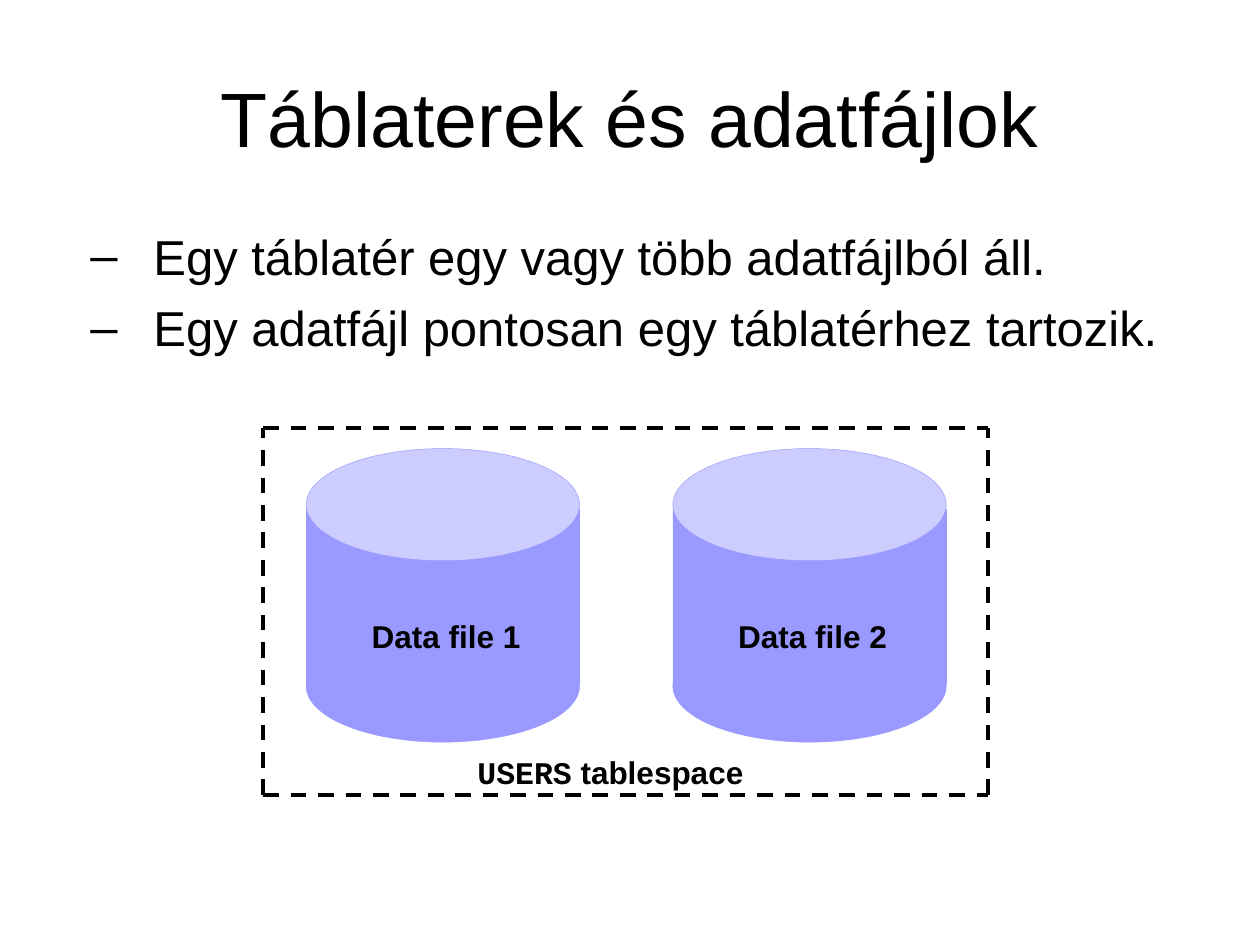
"""Build a slide on tablespaces and the data files they hold."""
from dataclasses import dataclass

from lxml.etree import SubElement
from pptx import Presentation
from pptx.dml.color import RGBColor
from pptx.enum.dml import MSO_LINE
from pptx.enum.shapes import MSO_CONNECTOR, MSO_SHAPE as SHAPE
from pptx.enum.text import MSO_ANCHOR as ANCHOR, PP_ALIGN as ALIGN
from pptx.oxml.ns import qn
from pptx.util import Inches, Pt


@dataclass(frozen=True)
class Theme:
    ink: RGBColor = RGBColor(0x00, 0x00, 0x00)
    side: RGBColor = RGBColor(0x99, 0x99, 0xFF)
    lid: RGBColor = RGBColor(0xCC, 0xCC, 0xFF)
    title: Pt = Pt(44)
    body: Pt = Pt(28)
    label: Pt = Pt(18)
    sans: str = "Arial"
    mono: str = "Courier New"


theme = Theme()


def add_box(left, top, width, height, pad_x=0.1, pad_y=0.05):
    tf = s.shapes.add_textbox(Inches(left), Inches(top), Inches(width), Inches(height)).text_frame
    tf.word_wrap = True
    tf.margin_left = tf.margin_right = Inches(pad_x)
    tf.margin_top = tf.margin_bottom = Inches(pad_y)
    return tf


def add_run(p, text, size=theme.label, font=theme.sans, bold=True, align=ALIGN.CENTER, spacing=0.85):
    p.alignment = align
    p.line_spacing = spacing
    r = p.add_run()
    r.text = text
    r.font.size = size
    r.font.name = font
    r.font.bold = bold
    r.font.color.rgb = theme.ink


prs = Presentation()
prs.slide_width, prs.slide_height = Inches(10), Inches(7.5)
s = prs.slides.add_slide(prs.slide_layouts[6])

tf = add_box(0.5, 0.3, 9, 1.25)
tf.vertical_anchor = ANCHOR.MIDDLE
add_run(tf.paragraphs[0], "Táblaterek és adatfájlok", size=theme.title, bold=False, spacing=1.0)

tf = add_box(0.5, 1.75, 9, 2.03)
statements = ["Egy táblatér egy vagy több adatfájlból áll.", "Egy adatfájl pontosan egy táblatérhez tartozik."]
for i, statement in enumerate(statements):
    p = tf.add_paragraph() if i else tf.paragraphs[0]
    add_run(p, statement, size=theme.body, bold=False, align=ALIGN.LEFT, spacing=1.0)
    p.space_before = Pt(7)
    pPr = p._p.get_or_add_pPr()
    pPr.set("marL", str(Inches(0.62)))
    pPr.set("indent", str(Inches(-0.5)))
    SubElement(pPr, qn("a:buFont"), typeface=theme.sans)
    SubElement(pPr, qn("a:buChar"), char="–")

cylinder_parts = [
    (SHAPE.RECTANGLE, 4.04, 1.39, theme.side),
    (SHAPE.OVAL, 3.56, 0.89, theme.lid),
    (SHAPE.OVAL, 5, 0.89, theme.side),
]
for label, left in [("Data file 1", 2.43), ("Data file 2", 5.34)]:
    for kind, top, height, color in cylinder_parts:
        sp = s.shapes.add_shape(kind, Inches(left), Inches(top), Inches(2.17), Inches(height))
        sp.shadow.inherit = False
        sp.fill.solid()
        sp.fill.fore_color.rgb = color
        sp.line.color.rgb = theme.side
        sp.line.width = Pt(0.25)
    tf = add_box(left + 0.31, 4.91, 1.6, 0.32, pad_x=0.06, pad_y=0.03)
    add_run(tf.paragraphs[0], label)

x1, y1, x2, y2 = 2.09, 3.4, 7.84, 6.31
for ends in [(x1, y2, x2, y2), (x1, y1, x2, y1), (x1, y2, x1, y1), (x2, y2, x2, y1)]:
    edge = s.shapes.add_connector(MSO_CONNECTOR.STRAIGHT, *map(Inches, ends))
    edge.line.color.rgb = theme.ink
    edge.line.width = Pt(2.25)
    edge.line.dash_style = MSO_LINE.DASH
    SubElement(edge._element.spPr, qn("a:effectLst"))

p = add_box(3.43, 5.99, 2.83, 0.32, pad_x=0.06, pad_y=0.03).paragraphs[0]
add_run(p, "USERS", font=theme.mono)
add_run(p, " tablespace")

prs.save("out.pptx")
